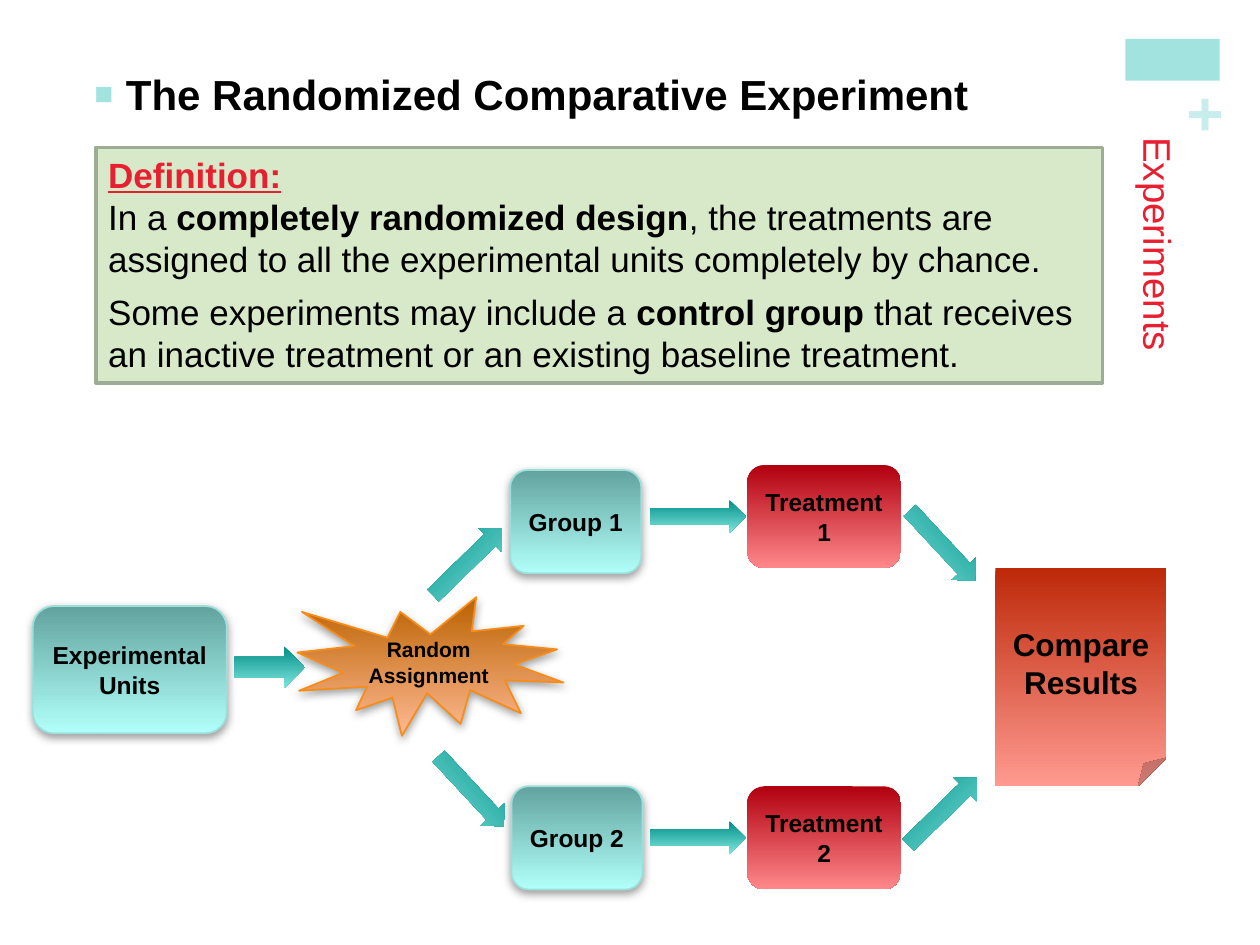
from lxml.etree import SubElement
from pptx import Presentation
from pptx.dml.color import RGBColor
from pptx.enum.shapes import MSO_SHAPE
from pptx.enum.text import MSO_ANCHOR, PP_ALIGN
from pptx.oxml.ns import qn
from pptx.util import Pt

COLORS = {
    "black": "000000", "red": "E81F30", "aqua": "A2E3DF", "pale": "C7EEEC",
    "panel": "D7E9C9", "panel edge": "9FAC95", "shadow": "808080",
}

# Gradient from top to bottom, then outline colour
STYLES = {
    "unit": ("62A39F", "B1FFFA", "9DE0DB"),
    "random": ("BA6200", "FFB993", "F78D18"),
    "arrow": ("008E87", "7FE6DE", None),
    "treatment": ("B1000F", "FF888B", None),
    "result": ("BD2909", "FF9A90", None),
}


def rgb(name):
    return RGBColor.from_string(COLORS.get(name, name))


def apply(target, values):
    for name, value in values.items():
        setattr(target, name, value)


def add_span(para, text, size, color="black", **font):
    span = para.add_run()
    span.text = text
    apply(span.font, {"name": "Arial", "size": Pt(size), "bold": False, **font})
    span.font.color.rgb = rgb(color)


def set_margins(frame, size=0):
    sides = ("margin_left", "margin_right", "margin_top", "margin_bottom")
    apply(frame, dict.fromkeys(sides, Pt(size)))


def add_panel(page, box, fill, line=None):
    panel = page.shapes.add_shape(MSO_SHAPE.RECTANGLE, *map(Pt, box))
    panel.shadow.inherit = False
    panel.fill.solid()
    panel.fill.fore_color.rgb = rgb(fill)
    if line:
        panel.line.color.rgb = rgb(line)
        panel.line.width = Pt(2)
    else:
        panel.line.fill.background()
    return panel


def add_shadow(shape):
    effects = shape._element.spPr.find(qn("a:effectLst"))
    outer = SubElement(effects, qn("a:outerShdw"), blurRad=str(Pt(5)),
                       dist=str(Pt(2)), dir="5400000", rotWithShape="0")
    color = SubElement(outer, qn("a:srgbClr"), val=COLORS["shadow"])
    SubElement(color, qn("a:alpha"), val="75000")


def add_gradient_shape(page, kind, box, style):
    top, bottom, edge = STYLES[style]
    shape = page.shapes.add_shape(kind, *map(Pt, box))
    shape.shadow.inherit = False
    shape.fill.gradient()
    shape.fill.gradient_angle = 270
    for stop, color in zip(shape.fill.gradient_stops, (top, bottom)):
        stop.color.rgb = rgb(color)
    if edge:
        shape.line.color.rgb = rgb(edge)
        shape.line.width = Pt(1)
        add_shadow(shape)
    else:
        shape.line.fill.background()
    return shape


def add_step(page, kind, box, style, text, size=14):
    shape = add_gradient_shape(page, kind, box, style)
    apply(shape.text_frame, {"word_wrap": True, "vertical_anchor": MSO_ANCHOR.MIDDLE})
    para = shape.text_frame.paragraphs[0]
    para.alignment = PP_ALIGN.CENTER
    add_span(para, text, size, bold=True)


def add_arrow(page, left, top, angle=0, width=54.7, height=18.7):
    arrow = add_gradient_shape(page, MSO_SHAPE.RIGHT_ARROW,
                               (left, top, width, height), "arrow")
    arrow.rotation = angle


def add_title(page, text):
    title = page.shapes.title
    apply(title, dict(zip(("left", "top", "width", "height"),
                          map(Pt, (629.3, 74.9, 53.3, 407.5)))))
    frame = title.text_frame
    apply(frame, {"word_wrap": True, "vertical_anchor": MSO_ANCHOR.TOP})
    frame._txBody.bodyPr.set("vert", "eaVert")
    para = frame.paragraphs[0]
    para.alignment = PP_ALIGN.LEFT
    add_span(para, text, 22, "red")


def add_plus(page):
    box = page.shapes.add_textbox(*map(Pt, (676.8, 44, 20.2, 44)))
    box.rotation = 270
    set_margins(box.text_frame)
    add_span(box.text_frame.paragraphs[0], "+", 36, "pale", bold=True)


def add_heading(page, text):
    box = page.shapes.add_textbox(*map(Pt, (54, 39, 570, 30)))
    box.text_frame.word_wrap = True
    set_margins(box.text_frame)
    para = box.text_frame.paragraphs[0]
    add_span(para, text, 24, bold=True)
    props = para._p.get_or_add_pPr()
    props.set("marL", str(Pt(18)))
    props.set("indent", str(-Pt(18)))
    color = SubElement(props, qn("a:buClr"))
    SubElement(color, qn("a:srgbClr"), val=COLORS["aqua"])
    SubElement(props, qn("a:buSzPct"), val="75000")
    SubElement(props, qn("a:buFont"), typeface="Arial")
    SubElement(props, qn("a:buChar"), char="■")


def add_definition(page):
    panel = add_panel(page, (54.7, 84.2, 575.3, 134.6), "panel", "panel edge")
    frame = panel.text_frame
    apply(frame, {"word_wrap": True, "vertical_anchor": MSO_ANCHOR.TOP})
    heading = frame.paragraphs[0]
    add_span(heading, "Definition:", 20, "red", bold=True, underline=True)
    # Each sentence: plain, bold term, plain
    sentences = (
        ("In a ", "completely randomized design",
         ", the treatments are assigned to all the experimental units completely by chance."),
        ("Some experiments may include a ", "control group",
         " that receives an inactive treatment or an existing baseline treatment."),
    )
    for sentence, space in zip(sentences, (6, 0)):
        para = frame.add_paragraph()
        para.space_after = Pt(space)
        for text, bold in zip(sentence, (False, True, False)):
            add_span(para, text, 20, bold=bold)
    for para in frame.paragraphs:
        para.alignment = PP_ALIGN.LEFT


def add_diagram(page):
    rounded = MSO_SHAPE.ROUNDED_RECTANGLE
    # Units and random assignment
    add_step(page, rounded, (18.7, 346.3, 110.9, 72.7), "unit", "Experimental Units")
    add_step(page, MSO_SHAPE.EXPLOSION1, (170, 341.3, 152, 79.2), "random",
             "Random Assignment", 12)
    add_arrow(page, 134, 369.4, width=40.3, height=23.8)

    # Branches: group corner, treatment top, straight arrow top, arrows in and out
    up, down = 315.8, 47.1
    branches = (
        ((291.6, 268.6), 265.7, 285.8, (239.8, 311.8, up), (511.2, 302.4, down)),
        ((292.3, 449.3), 449.3, 469.4, (241.9, 442.8, down), (511.2, 454.3, up)),
    )
    for number, (group, treatment, middle, inward, outward) in enumerate(branches, 1):
        add_step(page, rounded, (*group, 74.9, 59), "unit", f"Group {number}")
        add_step(page, rounded, (427, treatment, 87.8, 59), "treatment",
                 f"Treatment {number}")
        for arrow in (inward, (371.5, middle), outward):
            add_arrow(page, *arrow)

    # Comparison
    add_step(page, MSO_SHAPE.FOLDED_CORNER, (568.8, 324.7, 97.9, 124.6), "result",
             "Compare Results", 18)


def main():
    deck = Presentation()
    deck.slide_width, deck.slide_height = Pt(720), Pt(540)
    page = deck.slides.add_slide(deck.slide_layouts[5])
    add_panel(page, (643, 22.3, 54, 23.8), "aqua")
    add_plus(page)
    add_title(page, "Experiments")
    add_heading(page, "The Randomized Comparative Experiment")
    add_definition(page)
    add_diagram(page)
    deck.save("out.pptx")


if __name__ == "__main__":
    main()
